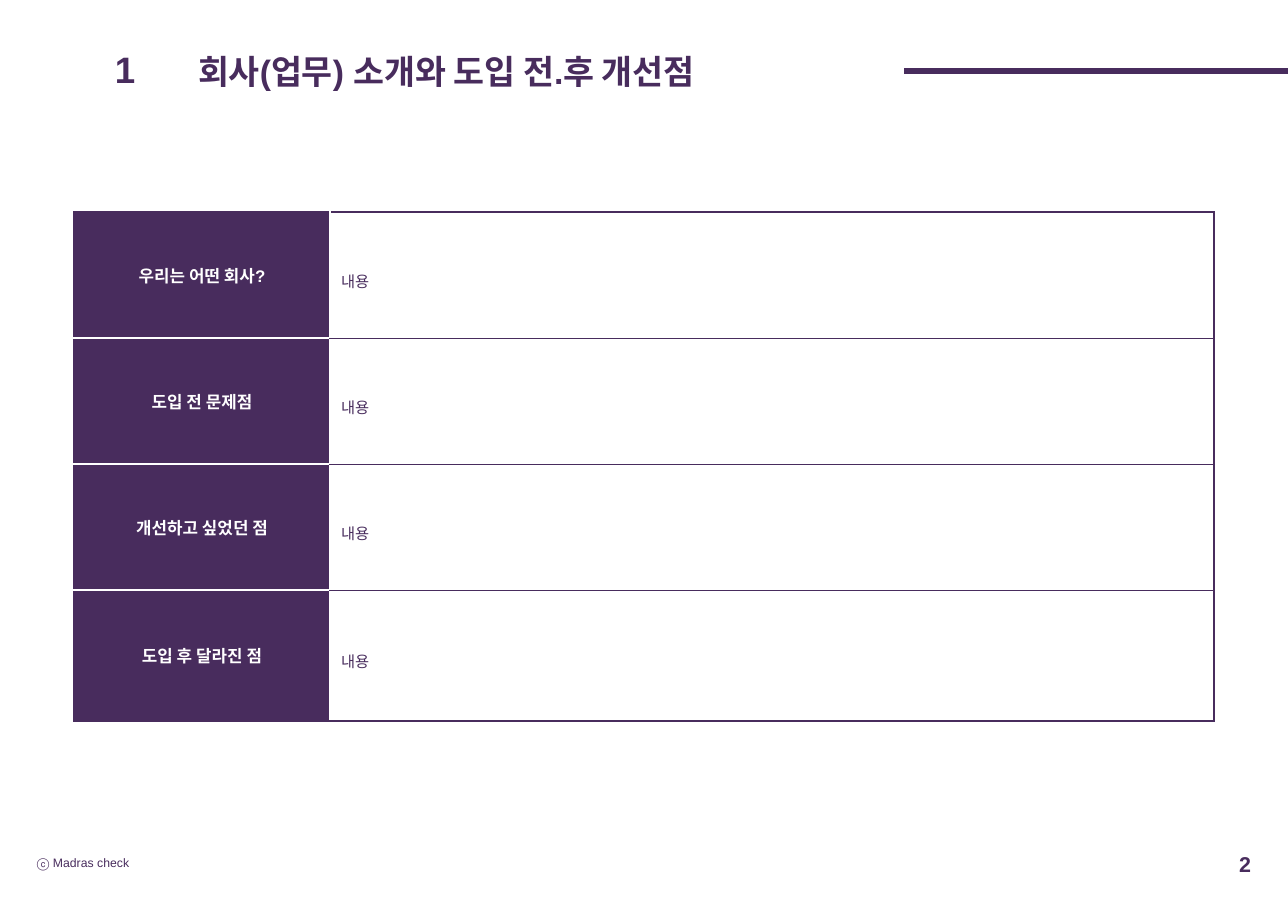
from lxml.etree import SubElement
from pptx import Presentation
from pptx.dml.color import RGBColor
from pptx.enum.shapes import MSO_CONNECTOR
from pptx.enum.text import MSO_ANCHOR, PP_ALIGN
from pptx.oxml.ns import qn
from pptx.util import Pt

SCALE = 8298
PURPLE, WHITE = "482C5D", "FFFFFF"
HEADING = "회사(업무) 소개와 도입 전.후 개선점"
SECTION = "1"
COPYRIGHT = "ⓒ Madras check"
PAGE = "2"
ANSWERS = [
    ("우리는 어떤 회사?", "내용"),
    ("도입 전 문제점", "내용"),
    ("개선하고 싶었던 점", "내용"),
    ("도입 후 달라진 점", "내용"),
]
COLUMN_WIDTHS = (256, 884)
ROW_HEIGHTS = (126, 126, 126, 131)


def px(length):
    return round(length * SCALE)


def color(value):
    return RGBColor.from_string(value)


def write(frame, text, size, ink=PURPLE, bold=False, align=PP_ALIGN.LEFT, spacing=1.0):
    paragraph = frame.paragraphs[0]
    paragraph.alignment = align
    paragraph.line_spacing = spacing
    paragraph.space_before = Pt(0)
    run = paragraph.add_run()
    run.text = text
    run.font.name = "Arial"
    run.font.size = Pt(size)
    run.font.bold = bold
    run.font.color.rgb = color(ink)


def place(holder, box, text, size, top_inset=0, **style):
    holder.left, holder.top, holder.width, holder.height = map(px, box)
    frame = holder.text_frame
    frame.word_wrap = True
    frame.vertical_anchor = MSO_ANCHOR.MIDDLE
    frame.margin_left = frame.margin_right = frame.margin_bottom = 0
    frame.margin_top = px(top_inset)
    write(frame, text, size, **style)


def border(cell, side, ink, width):
    line = SubElement(cell._tc.get_or_add_tcPr(), qn(f"a:ln{side}"), w=str(Pt(width)))
    fill = SubElement(line, qn("a:solidFill"))
    SubElement(fill, qn("a:srgbClr"), val=ink)


def fill_cell(cell, text, background, borders, **style):
    for side, ink, width in borders:
        border(cell, side, ink, width)
    cell.fill.solid()
    cell.fill.fore_color.rgb = color(background)
    cell.vertical_anchor = MSO_ANCHOR.MIDDLE
    write(cell.text_frame, text, **style)


def add_rule(slide):
    rule = slide.shapes.add_connector(
        MSO_CONNECTOR.STRAIGHT, px(1288), px(71), px(904), px(71))
    rule.line.color.rgb = color(PURPLE)
    rule.line.width = Pt(4.5)
    SubElement(rule._element.spPr, qn("a:effectLst"))


def add_answers(slide):
    table = slide.shapes.add_table(
        len(ANSWERS), len(COLUMN_WIDTHS), px(74), px(212),
        px(sum(COLUMN_WIDTHS)), px(sum(ROW_HEIGHTS))).table
    table.first_row = table.horz_banding = False
    for column, width in zip(table.columns, COLUMN_WIDTHS):
        column.width = px(width)
    last = len(ANSWERS) - 1
    for index, (question, answer) in enumerate(ANSWERS):
        table.rows[index].height = px(ROW_HEIGHTS[index])
        first_edge, last_edge = index == 0, index == last
        fill_cell(
            table.cell(index, 0), question, PURPLE,
            [("L", PURPLE, 1),
             ("T", PURPLE if first_edge else WHITE, 1),
             ("B", PURPLE if last_edge else WHITE, 1)],
            size=11, ink=WHITE, bold=True, align=PP_ALIGN.CENTER)
        fill_cell(
            table.cell(index, 1), answer, WHITE,
            [("R", PURPLE, 1),
             ("T", PURPLE, 1 if first_edge else 0.25),
             ("B", PURPLE, 1 if last_edge else 0.25)],
            size=10, spacing=1.5)


def main():
    deck = Presentation()
    deck.slide_width, deck.slide_height = px(1288), px(911)
    slide = deck.slides.add_slide(deck.slide_layouts[2])
    add_rule(slide)
    place(slide.shapes.title, (198, 47, 622, 45), HEADING, 22, top_inset=4, bold=True)
    place(slide.placeholders[1], (85, 47, 80, 44), SECTION, 24,
          bold=True, align=PP_ALIGN.CENTER)
    copyright_line = slide.shapes.add_textbox(0, 0, 0, 0)
    place(copyright_line, (37, 856, 126, 14), COPYRIGHT, 8)
    page_number = slide.shapes.add_textbox(0, 0, 0, 0)
    place(page_number, (1117, 851, 134, 26), PAGE, 14, bold=True, align=PP_ALIGN.RIGHT)
    add_answers(slide)
    deck.save("out.pptx")


if __name__ == "__main__":
    main()
